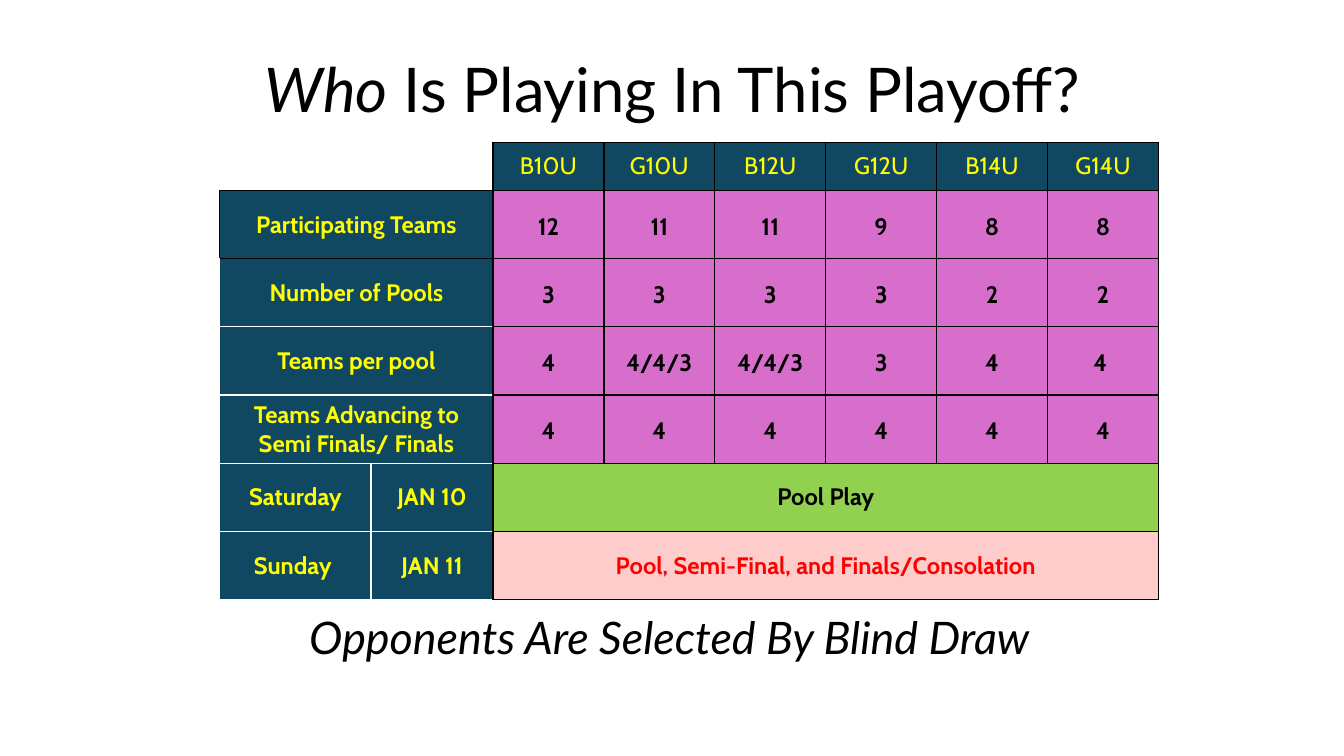
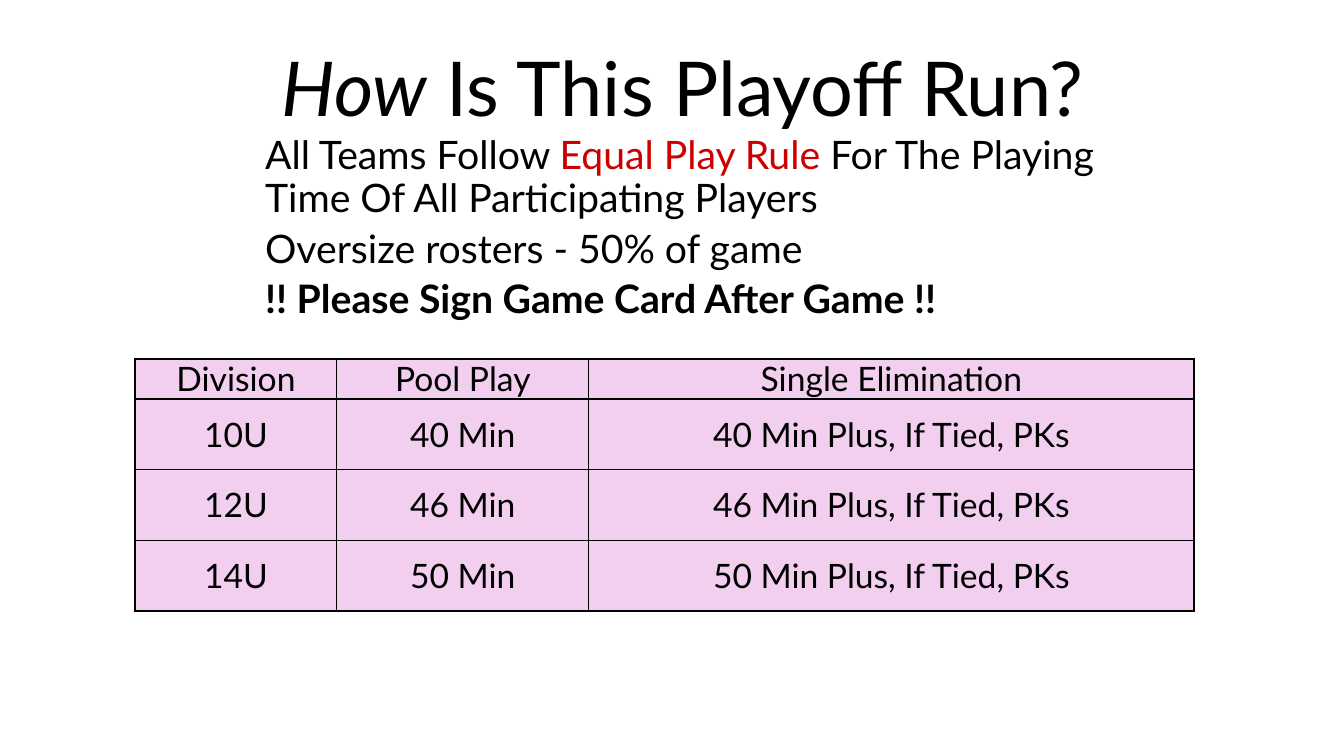
import lxml.etree
import pptx
import pptx.dml.color
import pptx.enum.text
import pptx.oxml.ns
import pptx.util

Inches = pptx.util.Inches
CENTER = pptx.enum.text.PP_ALIGN.CENTER
LEFT = pptx.enum.text.PP_ALIGN.LEFT
MIDDLE = pptx.enum.text.MSO_ANCHOR.MIDDLE
TOP = pptx.enum.text.MSO_ANCHOR.TOP

COLORS = {
    "black": "000000",
    "white": "FFFFFF",
    "navy": "104862",
    "yellow": "FFFF00",
    "orchid": "D86ECC",
    "green": "92D050",
    "rose": "FFCCCC",
    "red": "FF0000",
    "dark red": "CC0000",
    "pale orchid": "F2CFEE",
}
TEXT_FONT = "Lato"
GRID_FONT = "Cabin"

DIVISIONS = ["B10U", "G10U", "B12U", "G12U", "B14U", "G14U"]
TEAM_ROWS = [
    ("Participating Teams", ["12", "11", "11", "9", "8", "8"]),
    ("Number of Pools", ["3", "3", "3", "3", "2", "2"]),
    ("Teams per pool", ["4", "4/4/3", "4/4/3", "3", "4", "4 "]),
    ("Teams Advancing to Semi Finals/ Finals", ["4"] * 6),
]
DAY_ROWS = [
    ("Saturday", "JAN 10", "Pool Play", "green", "black"),
    ("Sunday ", "JAN 11", "Pool, Semi-Final, and Finals/Consolation", "rose", "red"),
]
GAME_LENGTHS = [
    ("Division", "Pool Play", "Single Elimination"),
    ("10U", "40 Min", "40 Min Plus, If Tied, PKs"),
    ("12U", "46 Min", "46 Min Plus, If Tied, PKs"),
    ("14U", "50 Min", "50 Min Plus, If Tied, PKs"),
]


def rgb(color):
    return pptx.dml.color.RGBColor.from_string(COLORS[color])


def format_font(font, size, color="black", name=TEXT_FONT, bold=False, italic=False):
    font.name = name
    font.size = pptx.util.Pt(size)
    font.color.rgb = rgb(color)
    font.bold = bold
    font.italic = italic


def place(box, left, top, width, height, anchor):
    box.left, box.top = Inches(left), Inches(top)
    box.width, box.height = Inches(width), Inches(height)
    frame = box.text_frame
    frame.word_wrap = True
    frame.auto_size = pptx.enum.text.MSO_AUTO_SIZE.NONE
    frame.vertical_anchor = anchor
    return frame


def write_spans(para, spans, size, align, indent=0.0):
    """Fill an unbulleted paragraph with (text, font options) spans."""
    properties = para._p.get_or_add_pPr()
    properties.set("marL", str(Inches(indent)))
    properties.set("indent", "0")
    lxml.etree.SubElement(properties, pptx.oxml.ns.qn("a:buNone"))
    para.alignment = align
    para.line_spacing = 0.9
    para.space_before = pptx.util.Pt(0)
    for text, options in spans:
        span = para.add_run()
        span.text = text
        format_font(span.font, size, **options)


def add_title(slide, left, width, question, rest, size):
    frame = place(slide.shapes.title, left, 0.44, width, 0.95, MIDDLE)
    spans = [(question, {"italic": True}), (rest, {})]
    write_spans(frame.paragraphs[0], spans, size, CENTER)


def add_grid(slide, left, top, widths, heights):
    table = slide.shapes.add_table(
        len(heights), len(widths), Inches(left), Inches(top),
        Inches(sum(widths)), Inches(sum(heights))).table
    table.first_row = table.horz_banding = False
    for column, width in zip(table.columns, widths):
        column.width = Inches(width)
    for row, height in zip(table.rows, heights):
        row.height = Inches(height)
    return table


def set_borders(cell, edges):
    """Draw the edges given as {side: (color, points)}; call before filling."""
    properties = cell._tc.get_or_add_tcPr()
    for side in "LRTB":
        if side in edges:
            color, points = edges[side]
            line = lxml.etree.SubElement(
                properties, pptx.oxml.ns.qn("a:ln" + side), w=str(pptx.util.Pt(points)))
            fill = lxml.etree.SubElement(line, pptx.oxml.ns.qn("a:solidFill"))
            lxml.etree.SubElement(fill, pptx.oxml.ns.qn("a:srgbClr"), val=COLORS[color])


def edges_of(left="black", right="black", top="black", bottom="black"):
    return {"L": (left, 1), "R": (right, 1), "T": (top, 1), "B": (bottom, 1)}


def fill_cell(cell, text, fill, edges, inset=(0.08, 0), line_spacing=None, **font):
    set_borders(cell, edges)
    cell.fill.solid()
    cell.fill.fore_color.rgb = rgb(fill)
    cell.margin_left = cell.margin_right = Inches(inset[0])
    cell.margin_top = cell.margin_bottom = Inches(inset[1])
    cell.vertical_anchor = MIDDLE
    cell.text = text
    para = cell.text_frame.paragraphs[0]
    para.alignment = CENTER
    if line_spacing:
        para.line_spacing = line_spacing
    format_font(para.runs[0].font, **font)


def fill_merged(table, row, first, last, text, fill, edges, **options):
    table.cell(row, first).merge(table.cell(row, last))
    for column in range(first + 1, last + 1):
        set_borders(table.cell(row, column), edges)
    fill_cell(table.cell(row, first), text, fill, edges, **options)


def add_teams_table(slide):
    header_height = 0.48
    row_count = len(TEAM_ROWS) + len(DAY_ROWS)
    row_height = (4.54 - header_height) / row_count
    table = add_grid(slide, 2.18, 1.41, [1.5, 1.21] + [1.1] * len(DIVISIONS),
                     [header_height] + [row_height] * row_count)
    last = len(DIVISIONS) + 1
    plain = {"name": GRID_FONT, "size": 17}
    bold = {**plain, "bold": True}
    label = {**bold, "color": "yellow"}
    wide = (0.1, 0.05)

    for column, sides in enumerate(["B", "RB"]):
        corner = table.cell(0, column)
        set_borders(corner, {side: ("black", 1) for side in sides})
        corner.fill.background()
    for column, division in enumerate(DIVISIONS, 2):
        fill_cell(table.cell(0, column), division, "navy", edges_of(),
                  color="yellow", **plain)

    for row, (name, values) in enumerate(TEAM_ROWS, 1):
        edges = edges_of() if row == 1 else edges_of(
            left="white", top="black" if row == 2 else "white", bottom="white")
        fill_merged(table, row, 0, 1, name, "navy", edges, inset=wide, **label)
        for column, value in enumerate(values, 2):
            fill_cell(table.cell(row, column), value, "orchid", edges_of(),
                      line_spacing=1.15, **bold)

    for row, (day, date, play, fill, color) in enumerate(DAY_ROWS, len(TEAM_ROWS) + 1):
        for column, (text, right) in enumerate([(day, "white"), (date, "black")]):
            fill_cell(table.cell(row, column), text, "navy",
                      edges_of("white", right, "white", "white"), **label)
        fill_merged(table, row, 2, last, play, fill, edges_of(), color=color, **bold)


def add_game_lengths_table(slide):
    table = add_grid(slide, 1.34, 3.56, [2, 2.5, 6], [0.4] + [0.7] * 3)
    last_row, last_column = len(GAME_LENGTHS) - 1, len(GAME_LENGTHS[0]) - 1
    for row, texts in enumerate(GAME_LENGTHS):
        for column, text in enumerate(texts):
            heavy = {"L": column == 0, "R": column == last_column,
                     "T": row <= 1, "B": row in (0, last_row)}
            edges = {side: ("black", 1.5 if thick else 1) for side, thick in heavy.items()}
            fill_cell(table.cell(row, column), text, "pale orchid", edges,
                      inset=(0.07, 0), size=24)


def add_rules(slide):
    frame = place(slide.placeholders[1], 2.34, 1.3, 8.82, 2.18, TOP)
    rules = [
        [("All Teams Follow ", {}), ("Equal Play Rule ", {"color": "dark red"}),
         ("For The Playing Time Of All Participating Players", {})],
        [("Oversize rosters - 50% of game", {})],
        [("!! Please Sign Game Card After Game !!", {"bold": True})],
    ]
    for index, spans in enumerate(rules):
        para = frame.add_paragraph() if index else frame.paragraphs[0]
        write_spans(para, spans, 28, LEFT, indent=0.19)
        para.space_after = pptx.util.Pt(3)
        if index:
            para.space_before = pptx.util.Pt(3)


def add_who_slide(deck):
    slide = deck.slides.add_slide(deck.slide_layouts[1])
    add_title(slide, 2.34, 8.82, "Who", " Is Playing In This Playoff? ", 44)
    frame = place(slide.placeholders[1], 2.28, 6.06, 8.82, 0.61, TOP)
    write_spans(frame.paragraphs[0],
                [("Opponents Are Selected By Blind Draw ", {"italic": True})], 32, CENTER)
    add_teams_table(slide)


def add_how_slide(deck):
    slide = deck.slides.add_slide(deck.slide_layouts[1])
    add_title(slide, 1.89, 9.95, "How", " Is This Playoff Run? ", 54)
    add_rules(slide)
    add_game_lengths_table(slide)


def main():
    deck = pptx.Presentation()
    deck.slide_width, deck.slide_height = Inches(13.33), Inches(7.5)
    add_who_slide(deck)
    add_how_slide(deck)
    deck.save("out.pptx")


if __name__ == "__main__":
    main()
